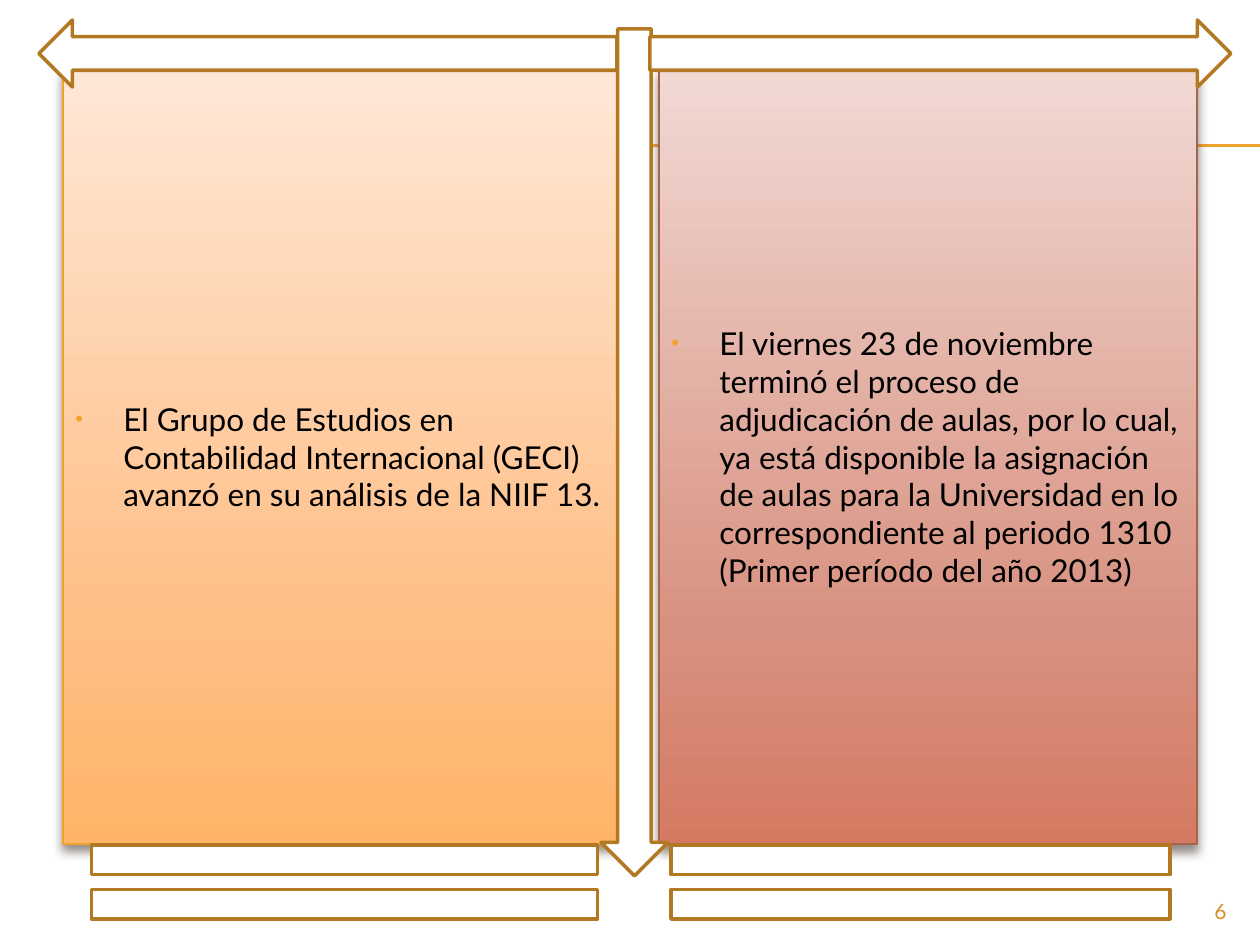
from lxml.etree import SubElement
from pptx import Presentation
from pptx.dml.color import RGBColor
from pptx.enum.shapes import MSO_CONNECTOR, MSO_SHAPE as Shape
from pptx.enum.text import MSO_ANCHOR, PP_ALIGN
from pptx.oxml import parse_xml
from pptx.oxml.ns import nsdecls, qn
from pptx.util import Pt

PX = 7257.14  # EMU per px, 126 px to the inch
FONT = "Lato"
WHITE = RGBColor(0xFF, 0xFF, 0xFF)
BLACK = RGBColor(0x00, 0x00, 0x00)
GOLD = RGBColor(0xF0, 0xA2, 0x2E)
BROWN = RGBColor(0xB2, 0x78, 0x22)
RUST = RGBColor(0xA5, 0x64, 0x4E)
NUMBER_COLOR = RGBColor(0xD4, 0x8F, 0x29)
SHADOW = RGBColor(0x4E, 0x3B, 0x30)
STOPS = (0, 72, 100)
ORANGES = [RGBColor(0xFF, 0xE7, 0xD7), RGBColor(0xFF, 0xBE, 0x84), RGBColor(0xFF, 0xB4, 0x68)]
REDS = [RGBColor(0xF1, 0xD9, 0xD4), RGBColor(0xD8, 0x91, 0x80), RGBColor(0xD4, 0x7A, 0x62)]

# Content: boxes are left, top, width, height in px
NEWS = [
    ((63, 69, 557, 775), ORANGES, GOLD,
     "El Grupo de Estudios en Contabilidad Internacional (GECI) avanzó en su "
     "análisis de la NIIF 13."),
    ((659, 69, 538, 775), REDS, RUST,
     "El viernes 23 de noviembre terminó el proceso de adjudicación de aulas, "
     "por lo cual, ya está disponible la asignación de aulas para la Universidad "
     "en lo correspondiente al periodo 1310 (Primer período del año 2013)"),
]
FRAME = [
    (Shape.DOWN_ARROW, (601, 29, 67, 847)),
    (Shape.RIGHT_ARROW, (650, 20, 581, 67)),
    (Shape.LEFT_ARROW, (39, 20, 578, 67)),
    (Shape.MATH_EQUAL, (0, 819, 689, 126)),
    (Shape.MATH_EQUAL, (581, 819, 679, 126)),
]
RULES_Y = (145, 146)
PAGE_NUMBER = "6"


def px(*lengths):
    return [round(length * PX) for length in lengths]


def add_text(paragraph, text, size, color):
    run = paragraph.add_run()
    run.text = text
    run.font.size = Pt(size)
    run.font.name = FONT
    run.font.color.rgb = color


def add_outlined(slide, kind, box, line_color, line_width):
    shape = slide.shapes.add_shape(kind, *px(*box))
    shape.shadow.inherit = False
    shape.fill.solid()
    shape.fill.fore_color.rgb = WHITE
    shape.line.color.rgb = line_color
    shape.line.width = Pt(line_width)
    return shape


def shade(shape, colors):
    """Three-stop vertical gradient and a soft shadow below."""
    stops = "".join(f'<a:gs pos="{pos * 1000}"><a:srgbClr val="{color}"/></a:gs>'
                    for pos, color in zip(STOPS, colors))
    properties = shape._element.spPr
    properties.replace(properties.find(qn("a:solidFill")), parse_xml(
        f'<a:gradFill {nsdecls("a")} rotWithShape="1"><a:gsLst>{stops}</a:gsLst>'
        '<a:lin ang="5400000" scaled="0"/></a:gradFill>'))
    properties.find(qn("a:effectLst")).append(parse_xml(
        f'<a:outerShdw {nsdecls("a")} blurRad="{Pt(6)}" dist="{Pt(4)}" dir="5400000" '
        f'rotWithShape="0"><a:srgbClr val="{SHADOW}"><a:alpha val="60000"/>'
        '</a:srgbClr></a:outerShdw>'))


def add_bullet(paragraph, indent):
    properties = paragraph._p.get_or_add_pPr()
    properties.set("marL", str(indent))
    properties.set("indent", str(-indent))
    color = SubElement(properties, qn("a:buClr"))
    SubElement(color, qn("a:srgbClr"), val=str(GOLD))
    SubElement(properties, qn("a:buSzPct"), val="70000")
    SubElement(properties, qn("a:buFont"), typeface="Arial")
    SubElement(properties, qn("a:buChar"), char="•")


prs = Presentation()
prs.slide_width, prs.slide_height = px(1260, 945)
slide = prs.slides.add_slide(prs.slide_layouts[6])

# Double rule behind the panels
for y in RULES_Y:
    rule = slide.shapes.add_connector(MSO_CONNECTOR.STRAIGHT, *px(71, y, 1260, y))
    rule.line.color.rgb = GOLD
    rule.line.width = Pt(0.75)
    SubElement(rule._element.spPr, qn("a:effectLst"))

# News panels
for box, colors, border, news in NEWS:
    panel = add_outlined(slide, Shape.RECTANGLE, box, border, 0.79)
    shade(panel, colors)
    frame = panel.text_frame
    frame.word_wrap = True
    frame.vertical_anchor = MSO_ANCHOR.MIDDLE
    paragraph = frame.paragraphs[0]
    paragraph.alignment = PP_ALIGN.LEFT
    paragraph.space_before = Pt(3.6)
    add_bullet(paragraph, px(48)[0])
    add_text(paragraph, news, 18, BLACK)

# Arrows and equal signs around the panels
for kind, box in FRAME:
    add_outlined(slide, kind, box, BROWN, 2)

# Page number
number = slide.shapes.add_textbox(*px(1134, 892, 105, 34)).text_frame
number.word_wrap = True
number.paragraphs[0].alignment = PP_ALIGN.RIGHT
add_text(number.paragraphs[0], PAGE_NUMBER, 12, NUMBER_COLOR)

prs.save("out.pptx")
